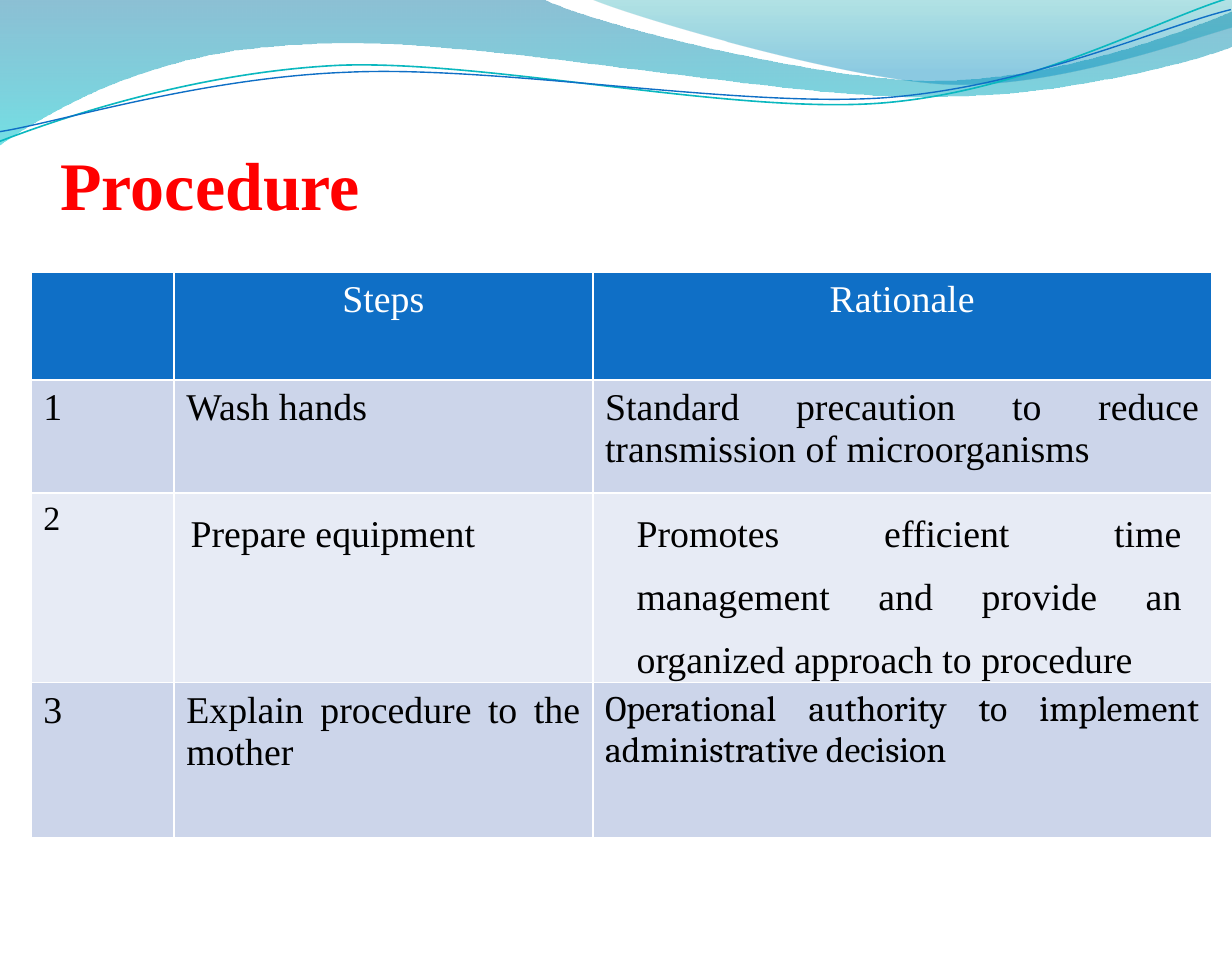
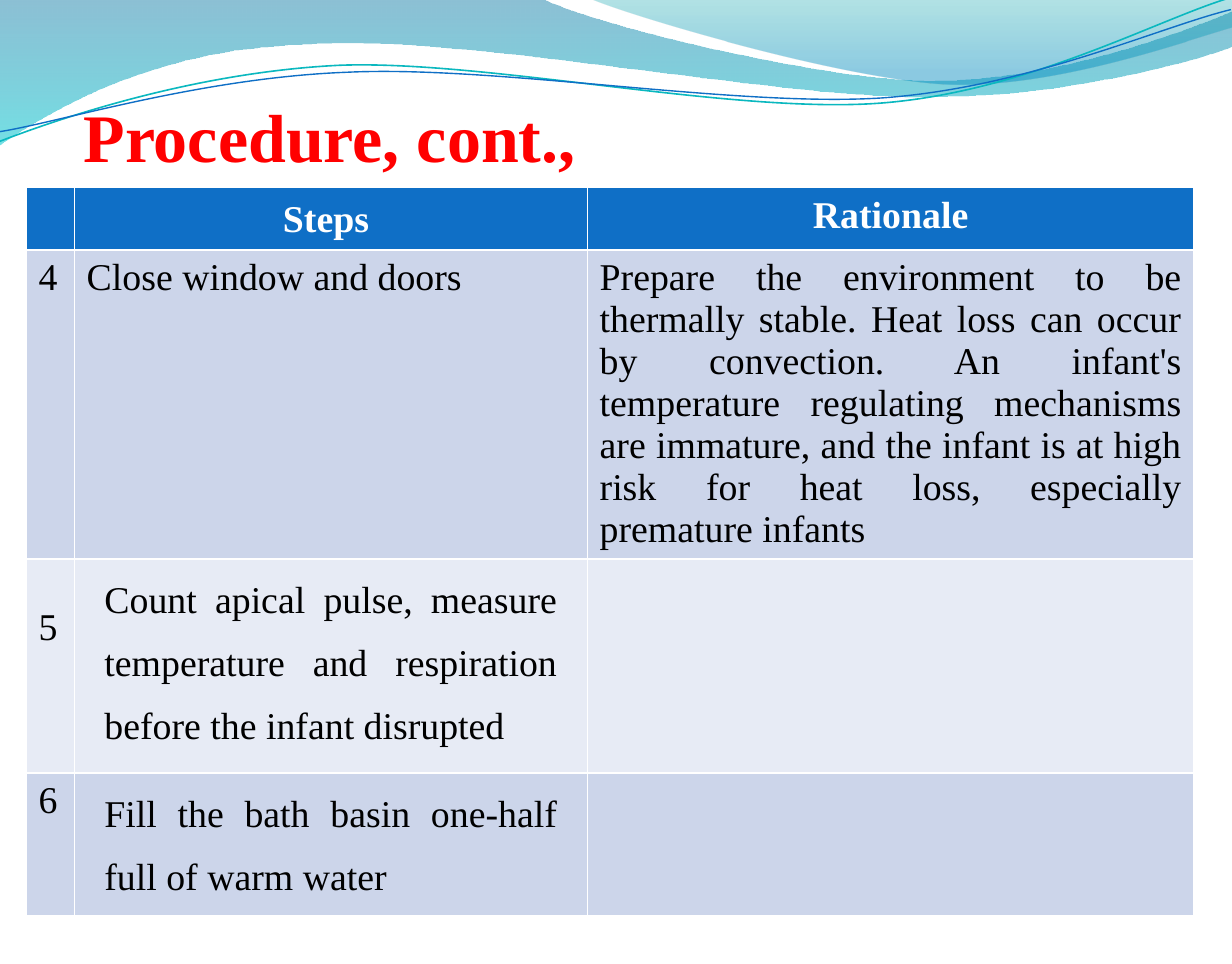
from itertools import chain

from lxml.etree import SubElement
from pptx import Presentation
from pptx.dml.color import RGBColor
from pptx.enum.text import MSO_ANCHOR, PP_ALIGN
from pptx.oxml.ns import qn
from pptx.util import Cm, Pt

FONT = "Times New Roman"
RED, BLUE, WHITE, BLACK = "FF0000", "0F6FC6", "FFFFFF", "000000"
ROW_FILLS = ["CCD5EA", "E7EBF5"]
WIDTH, HEIGHT = 23.01, 18.01

# Wave outlines in cm: a pair is a straight line, six numbers are a Bézier curve.
BANDS = [
    {"outline": [(-0.02, 0), (10.13, -0.03), (10.95, 0.41, 15.27, 1.5, 17.45, 1.5),
                 (19.63, 1.5, 22.05, 0.61, WIDTH, 0.2), (WIDTH, 0.86),
                 (22.61, 1.04, 20.02, 1.83, 17.15, 1.81),
                 (14.3, 1.81, 8.79, 0.66, 5.92, 0.82),
                 (2.97, 0.87, 1.07, 1.98, -0.02, 2.72)],
     "stops": [(0, "0074A1", 45), (1, "00C6CF", 55)]},
    {"outline": [(11.02, -0.03), (11.71, 0.28, 15.7, 1.47, 17.68, 1.57),
                 (19.69, 1.65, 22.12, 0.76, WIDTH, 0.51), (WIDTH, 0)],
     "stops": [(0, "00A1A9", 30), (0.8, "008BBF", 45)]},
]
WAVE_LINES = [
    {"outline": [(0, 2.64), (1.12, 2.21, 3.63, 1.35, 6.35, 1.22),
                 (9.09, 1.12, 13.64, 2.13, 16.41, 1.93),
                 (19.15, 1.73, 21.59, 0.38, 22.94, -0.03)],
     "color": "0AB8BF", "width": 0.85},
    {"outline": [(0, 2.46), (1.09, 2.29, 3.76, 1.45, 6.5, 1.35),
                 (9.27, 1.22, 13.74, 2.01, 16.48, 1.83),
                 (19.23, 1.63, 21.64, 0.51, 22.99, 0.18)],
     "color": BLUE, "width": 0.75},
]

# Cell formats; margins are left, top, right, bottom in cm.
BODY = {"size": 20, "font": FONT, "color": BLACK, "bold": False, "spacing": 1,
        "align": PP_ALIGN.JUSTIFY, "margins": (0.23, 0.13, 0.23, 0.13)}
HEADER = {**BODY, "color": WHITE, "align": PP_ALIGN.CENTER}


def spaced(left, right=0.56):
    return {"spacing": 1.5, "margins": (left, 0, right, 0)}


# A cell is a text, or a text with the format that differs from its row.
SLIDES = [
    {"title": "Procedure", "title_box": (1.13, 1.18, 20.7, 3),
     "table_at": (0.58, 5.08), "header_bold": False,
     "cols": [2.67, 7.82, 11.56], "heights": [2.02, 2.11, 3.54, 2.9],
     "rows": [
         ["", "Steps", "Rationale"],
         ["1", "Wash hands",
          "Standard precaution to reduce transmission of microorganisms"],
         [("2", {"size": 18}), ("Prepare equipment", spaced(0.31)),
          ("Promotes efficient time management and provide an organized "
           "approach to procedure", spaced(0.82))],
         ["3", "Explain procedure to the mother",
          ("Operational authority to implement administrative decision",
           {"size": 19, "font": "Cambria"})],
     ]},
    {"title": "Procedure, cont.,", "title_box": (1.56, 0.75, 20.7, 2.54),
     "table_at": (0.49, 3.5), "header_bold": True,
     "cols": [0.9, 9.58, 11.33], "heights": [1.17, 5.77, 4, 2.67],
     "rows": [
         ["", ("Steps", {"margins": (0.23, 0.22, 0.41, 0.1)}), "Rationale"],
         ["4", "Close window and doors",
          "Prepare the environment to be thermally stable. Heat loss can occur "
          "by convection. An infant's temperature regulating mechanisms are "
          "immature, and the infant is at high risk for heat loss, especially "
          "premature infants"],
         [("5", {"margins": (0.23, 0.9, 0.23, 0.13)}),
          ("Count apical pulse, measure temperature and respiration before "
           "the infant disrupted", spaced(0.56)), ""],
         ["6", ("Fill the bath basin one-half full of warm water",
                spaced(0.56)), ""],
     ]},
]


def rgb(color):
    return RGBColor.from_string(color)


def add_outline(slide, outline, close):
    """Build a freeform through all points, then bend the curved segments."""
    values = [Cm(v) for v in chain.from_iterable(outline)]
    start, *rest = zip(values[::2], values[1::2])
    builder = slide.shapes.build_freeform(*start)
    builder.add_line_segments(rest, close=close)
    s = builder.convert_to_shape()
    s.shadow.inherit = False
    lines = iter(list(s.element.spPr.iter(qn("a:lnTo"))))
    for segment in outline[1:]:
        first, *others = [next(lines) for _ in range(len(segment) // 2)]
        if others:
            parent = first.getparent()
            curve = SubElement(parent, qn("a:cubicBezTo"))
            parent.replace(first, curve)
            curve.append(first[0])
            for line in others:
                curve.append(line[0])
                parent.remove(line)
    return s


def add_band(slide, band):
    s = add_outline(slide, band["outline"], True)
    s.line.fill.background()
    s.fill.gradient()
    s.fill.gradient_angle = 270
    for stop, (position, color, _) in zip(s.fill.gradient_stops, band["stops"]):
        stop.position = position
        stop.color.rgb = rgb(color)
    colors = s.element.spPr.iter(qn("a:srgbClr"))
    for clr, (_, _, opacity) in zip(colors, band["stops"]):
        SubElement(clr, qn("a:alpha"), val=str(opacity * 1000))
    return s


def add_wave_line(slide, wave):
    s = add_outline(slide, wave["outline"], False)
    s.fill.background()
    s.line.color.rgb = rgb(wave["color"])
    s.line.width = Pt(wave["width"])
    return s


def decorate_layout(layout, slide):
    """Draw the waves on a slide, then move them behind the layout's title."""
    for ph in list(layout.placeholders):
        if ph.placeholder_format.idx != 0:
            ph.element.getparent().remove(ph.element)
    waves = [add_band(slide, band) for band in BANDS]
    waves += [add_wave_line(slide, wave) for wave in WAVE_LINES]
    for i, s in enumerate(waves):
        layout.shapes.element.insert(2 + i, s.element)


def style_paragraph(p, size, font, color, bold, align):
    p.alignment = align
    p.font.size = Pt(size)
    p.font.name = font
    p.font.bold = bold
    p.font.color.rgb = rgb(color)


def set_title(slide, text, box):
    s = slide.shapes.title
    s.left, s.top, s.width, s.height = map(Cm, box)
    tf = s.text_frame
    tf.text = text
    tf.vertical_anchor = MSO_ANCHOR.BOTTOM
    tf.margin_left = tf.margin_right = tf.margin_bottom = 0
    tf.margin_top = Cm(0.13)
    style_paragraph(tf.paragraphs[0], 36, FONT, RED, True, PP_ALIGN.LEFT)


def add_borders(cell):
    tc_pr = cell._tc.get_or_add_tcPr()
    for i, side in enumerate("LRTB"):
        ln = SubElement(tc_pr, qn(f"a:ln{side}"), w=str(Pt(1)))
        fill = SubElement(ln, qn("a:solidFill"))
        SubElement(fill, qn("a:srgbClr"), val=WHITE)
        tc_pr.insert(i, ln)


def fill_cell(cell, text, fmt, fill):
    cell.fill.solid()
    cell.fill.fore_color.rgb = rgb(fill)
    add_borders(cell)
    (cell.margin_left, cell.margin_top,
     cell.margin_right, cell.margin_bottom) = map(Cm, fmt["margins"])
    if not text:
        return
    cell.text = text
    p = cell.text_frame.paragraphs[0]
    p.line_spacing = float(fmt["spacing"])
    style_paragraph(p, fmt["size"], fmt["font"], fmt["color"], fmt["bold"],
                    fmt["align"])


def add_steps_table(slide, data):
    cols, heights, rows = data["cols"], data["heights"], data["rows"]
    left, top = data["table_at"]
    table = slide.shapes.add_table(len(rows), len(cols), Cm(left), Cm(top),
                                   Cm(sum(cols)), Cm(sum(heights))).table
    for column, width in zip(table.columns, cols):
        column.width = Cm(width)
    for r, (row, height) in enumerate(zip(rows, heights)):
        table.rows[r].height = Cm(height)
        base = BODY if r else {**HEADER, "bold": data["header_bold"]}
        fill = ROW_FILLS[(r - 1) % 2] if r else BLUE
        for c, item in enumerate(row):
            text, changes = (item, {}) if isinstance(item, str) else item
            fill_cell(table.cell(r, c), text, {**base, **changes}, fill)


def main():
    prs = Presentation()
    prs.slide_width, prs.slide_height = Cm(WIDTH), Cm(HEIGHT)
    layout = prs.slide_layouts[5]
    for i, data in enumerate(SLIDES):
        slide = prs.slides.add_slide(layout)
        if i == 0:
            decorate_layout(layout, slide)
        set_title(slide, data["title"], data["title_box"])
        add_steps_table(slide, data)
    prs.save("out.pptx")


if __name__ == "__main__":
    main()
